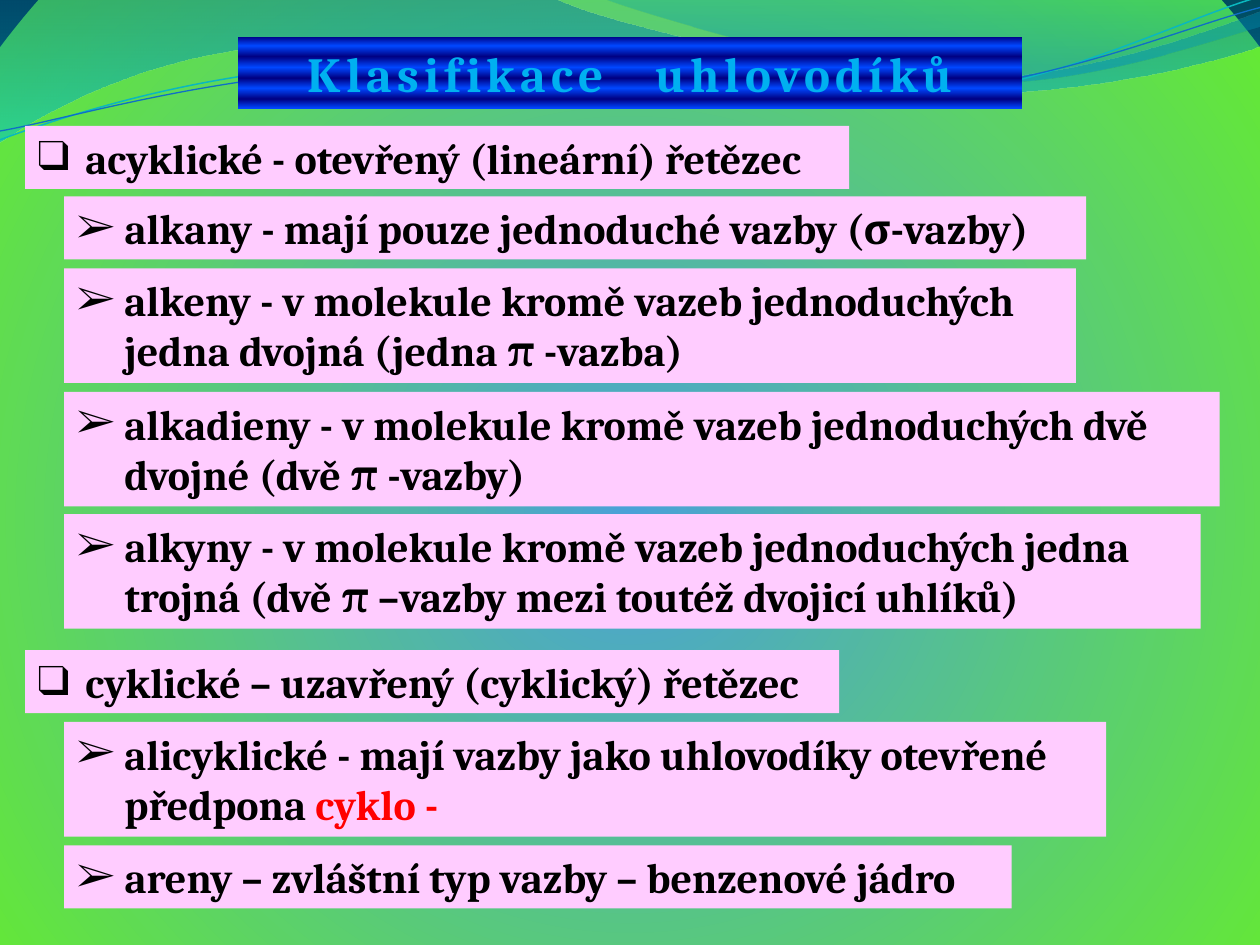
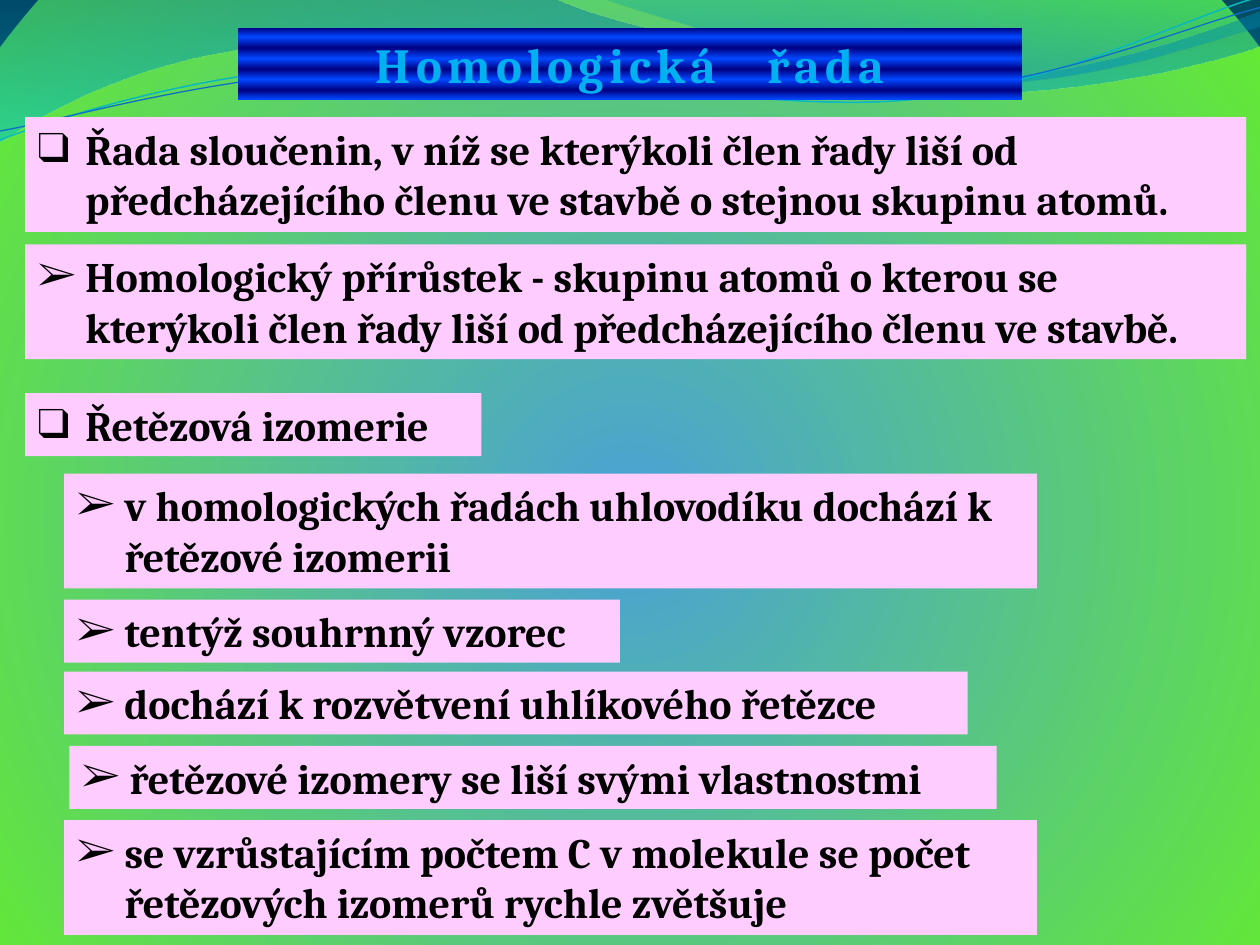
from pptx import Presentation
from pptx.dml.color import RGBColor
from pptx.enum.shapes import MSO_SHAPE
from pptx.enum.text import MSO_ANCHOR, MSO_AUTO_SIZE, PP_ALIGN
from pptx.oxml import parse_xml
from pptx.oxml.ns import nsdecls, qn
from pptx.util import Inches, Pt

COLORS = {
    "center": "4AA0D8", "green": "64E935", "corner": "00283F",
    "wave_top": "0074A1", "wave_low": "00C6CF",
    "crest_top": "00A1A9", "crest_low": "008BBF",
    "line_teal": "0AB8BF", "line_blue": "0F6FC6",
    "band_dark": "000082", "band_light": "0047FF",
    "title": "00B0F0", "title_edge": "F4F5FA",
    "box": "FFCCFF", "text": "000000", "accent": "FF0000",
}
FONT = "Cambria"
TITLE_FONT = {"name": FONT, "size": Pt(28), "bold": True}
BODY_FONT = {"name": FONT, "size": Pt(24), "bold": True}
HANG = Inches(0.38)
OUTER, INNER = 0.2, 0.51
MAIN, SUB = "❑", "➢"
BAND_STOPS = [(pos, "band_light" if i % 2 else "band_dark", 100)
              for i, pos in enumerate((0, 13, 28, 43, 58, 72, 87, 100))]

# Each curve is a start point followed by lines (2 numbers) and Béziers (6 numbers)
WAVE = [(0, 0), (4.4, -0.01), (4.76, 0.17, 6.64, 0.63, 7.58, 0.63),
        (8.53, 0.63, 9.58, 0.26, 10, 0.09), (10.01, 0.36),
        (9.83, 0.44, 8.7, 0.76, 7.46, 0.75), (6.22, 0.75, 3.82, 0.28, 2.57, 0.34),
        (1.29, 0.36, 0.46, 0.83, -0.01, 1.13)]
CREST = [(4.79, -0.01), (5.09, 0.11, 6.82, 0.62, 7.69, 0.65),
         (8.56, 0.69, 9.61, 0.32, 10, 0.21), (10, 0)]
TEAL_LINE = [(0, 1.11), (0.48, 0.93, 1.58, 0.57, 2.77, 0.52),
             (3.95, 0.47, 5.93, 0.89, 7.13, 0.8), (8.33, 0.71, 9.38, 0.15, 9.98, -0.02)]
BLUE_LINE = [(0, 1.04), (0.47, 0.96, 1.64, 0.61, 2.83, 0.56),
             (4.03, 0.51, 5.97, 0.84, 7.17, 0.75), (8.36, 0.67, 9.41, 0.21, 10, 0.06)]

# Box: bullet, left, top, width, number of lines, text, runs of a second paragraph
CLASSES = [
    (MAIN, OUTER, 1, 6.54, 1, "acyklické - otevřený (lineární) řetězec"),
    (SUB, INNER, 1.56, 8.11, 1, "alkany - mají pouze jednoduché vazby (σ-vazby)"),
    (SUB, INNER, 2.13, 8.03, 2,
     "alkeny - v molekule kromě vazeb jednoduchých jedna dvojná (jedna π -vazba)"),
    (SUB, INNER, 3.11, 9.17, 2,
     "alkadieny - v molekule kromě vazeb jednoduchých dvě dvojné (dvě π -vazby)"),
    (SUB, INNER, 4.08, 9.02, 2,
     "alkyny - v molekule kromě vazeb jednoduchých jedna trojná "
     "(dvě π –vazby mezi toutéž dvojicí uhlíků)"),
    (MAIN, OUTER, 5.16, 6.46, 1, "cyklické – uzavřený (cyklický) řetězec"),
    (SUB, INNER, 5.73, 8.27, 2, "alicyklické - mají vazby jako uhlovodíky otevřené",
     [("předpona ", "text"), ("cyklo -", "accent")]),
    (SUB, INNER, 6.71, 7.52, 1, "areny – zvláštní typ vazby – benzenové jádro"),
]
SERIES = [
    (MAIN, OUTER, 0.93, 9.69, 2,
     "Řada sloučenin, v níž se kterýkoli člen řady liší od "
     "předcházejícího členu ve stavbě o stejnou skupinu atomů."),
    (SUB, OUTER, 1.94, 9.69, 2,
     "Homologický přírůstek - skupinu atomů o kterou se kterýkoli člen řady "
     "liší od předcházejícího členu ve stavbě."),
    (MAIN, OUTER, 3.12, 3.62, 1, "Řetězová izomerie"),
    (SUB, INNER, 3.76, 7.72, 2,
     "v homologických řadách uhlovodíku dochází k řetězové izomerii"),
    (SUB, INNER, 4.76, 4.41, 1, "tentýž souhrnný vzorec"),
    (SUB, INNER, 5.33, 7.17, 1, "dochází k rozvětvení uhlíkového řetězce"),
    (SUB, 0.55, 5.92, 7.36, 1, "řetězové izomery se liší svými vlastnostmi"),
    (SUB, INNER, 6.51, 7.72, 2,
     "se vzrůstajícím počtem C v molekule se počet řetězových izomerů rychle zvětšuje"),
]


def rgb(key):
    return RGBColor.from_string(COLORS[key])


def xml(tag, body=""):
    return parse_xml(f"<a:{tag} {nsdecls('a')}>{body}</a:{tag}>")


def set_gradient(fill, holder, stops, direction='<a:lin ang="5400000" scaled="0"/>'):
    """Give holder a gradient of (percent, colour key, opacity) stops."""
    fill.solid()
    gs = "".join(f'<a:gs pos="{pos * 1000}"><a:srgbClr val="{COLORS[key]}">'
                 f'<a:alpha val="{alpha * 1000}"/></a:srgbClr></a:gs>'
                 for pos, key, alpha in stops)
    solid = holder.find(qn("a:solidFill"))
    holder.replace(solid, xml("gradFill", f"<a:gsLst>{gs}</a:gsLst>{direction}"))


def add_curve(s, curve, closed):
    """Build the outline through its end points, then bend the Bézier segments."""
    points = [(Inches(seg[-2]), Inches(seg[-1])) for seg in curve]
    builder = s.shapes.build_freeform(*points[0])
    builder.add_line_segments(points[1:], close=closed)
    sp = builder.convert_to_shape()
    sp.shadow.inherit = False
    lines = list(sp.element.iter(qn("a:lnTo")))
    for line, seg in zip(lines, curve[1:]):
        if len(seg) == 6:
            pts = "".join(f'<a:pt x="{Inches(x) - sp.left}" y="{Inches(y) - sp.top}"/>'
                          for x, y in zip(seg[::2], seg[1::2]))
            line.getparent().replace(line, xml("cubicBezTo", pts))
    return sp


def decorate_layout(layout, s):
    """Draw the background and the waves once and keep them on the layout."""
    fill = layout.background.fill
    fill.solid()
    bg = next(layout.element.iter(qn("p:bgPr")))
    set_gradient(fill, bg, [(0, "center", 100), (100, "green", 100), (100, "corner", 100)],
                 '<a:path path="circle"><a:fillToRect l="10000" t="110000" '
                 'r="10000" b="100000"/></a:path>')
    waves = [(WAVE, [(0, "wave_top", 45), (100, "wave_low", 55)]),
             (CREST, [(0, "crest_top", 30), (80, "crest_low", 45)])]
    for curve, stops in waves:
        sp = add_curve(s, curve, True)
        set_gradient(sp.fill, sp.element.spPr, stops)
        sp.line.fill.background()
        layout.shapes.element.append(sp.element)
    for curve, color, width in [(TEAL_LINE, "line_teal", 0.85),
                                (BLUE_LINE, "line_blue", 0.75)]:
        sp = add_curve(s, curve, False)
        sp.fill.background()
        sp.line.color.rgb = rgb(color)
        sp.line.width = Pt(width)
        layout.shapes.element.append(sp.element)


def add_run(p, text, color, fmt):
    r = p.add_run()
    r.text = text
    for name, value in fmt.items():
        setattr(r.font, name, value)
    r.font.color.rgb = rgb(color)
    return r


def set_title(s, words, top):
    title = s.shapes.title
    frame = {"left": 1.89, "top": top, "width": 6.22, "height": 0.57}
    for name, value in frame.items():
        setattr(title, name, Inches(value))
    set_gradient(title.fill, title.element.spPr, BAND_STOPS)
    tf = title.text_frame
    tf.word_wrap = True
    tf.vertical_anchor = MSO_ANCHOR.MIDDLE
    tf.auto_size = MSO_AUTO_SIZE.NONE
    p = tf.paragraphs[0]
    p.alignment = PP_ALIGN.CENTER
    first, last = words
    for text, spacing in ((first, 300), (" ", 2000), (last, 300)):
        rPr = add_run(p, text, "title", TITLE_FONT).font._element
        rPr.set("spc", str(spacing))
        edge = xml("ln", f'<a:solidFill><a:srgbClr val="{COLORS["title_edge"]}"/></a:solidFill>')
        edge.set("w", str(Pt(0.9)))
        rPr.insert(0, edge)


def indent(p, bullet=None):
    pPr = p._p.get_or_add_pPr()
    pPr.set("marL", str(HANG))
    pPr.set("indent", str(-HANG if bullet else 0))
    if bullet:
        for tag, name, value in (("buFont", "typeface", FONT), ("buChar", "char", bullet)):
            mark = xml(tag)
            mark.set(name, value)
            pPr.append(mark)


def add_box(s, bullet, left, top, width, lines, text, extra=None):
    sp = s.shapes.add_shape(MSO_SHAPE.RECTANGLE, Inches(left), Inches(top),
                            Inches(width), Inches(0.09 + 0.41 * lines))
    sp.shadow.inherit = False
    sp.fill.solid()
    sp.fill.fore_color.rgb = rgb("box")
    sp.line.fill.background()
    tf = sp.text_frame
    tf.word_wrap = True
    tf.vertical_anchor = MSO_ANCHOR.TOP
    tf.auto_size = MSO_AUTO_SIZE.SHAPE_TO_FIT_TEXT
    p = tf.paragraphs[0]
    p.alignment = PP_ALIGN.LEFT
    indent(p, bullet)
    add_run(p, text, "text", BODY_FONT)
    if extra:
        p = tf.add_paragraph()
        p.alignment = PP_ALIGN.LEFT
        indent(p)
        for part, color in extra:
            add_run(p, part, color, BODY_FONT)


def main():
    prs = Presentation()
    prs.slide_width, prs.slide_height = Inches(10), Inches(7.5)
    layout = prs.slide_layouts[5]
    pages = [(("Klasifikace", "uhlovodíků"), 0.29, CLASSES),
             (("Homologická", "řada"), 0.22, SERIES)]
    for i, (words, top, boxes) in enumerate(pages):
        s = prs.slides.add_slide(layout)
        if i == 0:
            decorate_layout(layout, s)
        set_title(s, words, top)
        for box in boxes:
            add_box(s, *box)
    prs.save("out.pptx")


if __name__ == "__main__":
    main()
